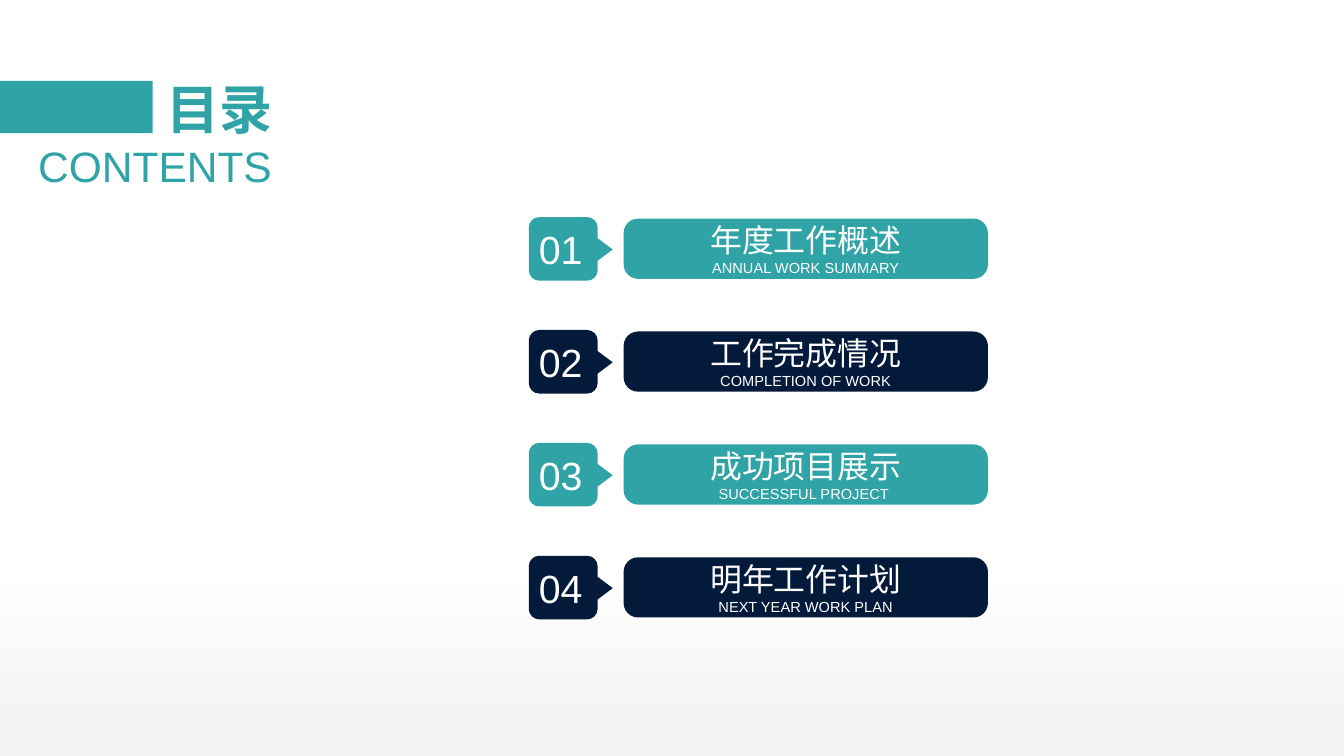
"""Build a contents slide with four numbered sections."""
from lxml.etree import SubElement
from pptx import Presentation
from pptx.dml.color import RGBColor
from pptx.enum.shapes import MSO_SHAPE
from pptx.enum.text import MSO_ANCHOR, PP_ALIGN
from pptx.oxml.ns import qn
from pptx.util import Cm, Pt

WIDE, HIGH = 35.71, 20.09
TEAL, NAVY, WHITE, GREY = "2FA3A5", "041A3B", "FFFFFF", "F2F2F2"
ITEMS = [
    ("年度工作概述", "ANNUAL WORK SUMMARY"),
    ("工作完成情况", "COMPLETION OF WORK"),
    ("成功项目展示", "SUCCESSFUL PROJECT "),
    ("明年工作计划", "NEXT YEAR WORK PLAN"),
]
FIRST, STEP = 5.81, 3.0


def tint(code):
    """Turn a hex string into a colour."""
    return RGBColor.from_string(code)


def paint(shape, code):
    """Give a shape a flat fill with no line or shadow."""
    shape.fill.solid()
    shape.fill.fore_color.rgb = tint(code)
    shape.line.fill.background()
    shape.shadow.inherit = False


def frame(shape, anchor=MSO_ANCHOR.MIDDLE, right=0.0):
    """Set the margins and anchor of a shape's text."""
    body = shape.text_frame
    body.word_wrap = True
    body.vertical_anchor = anchor
    body.margin_left = body.margin_top = body.margin_bottom = 0
    body.margin_right = Cm(right)
    return body


def write(body, text, size=24, color=WHITE, bold=False, align=PP_ALIGN.CENTER):
    """Add one paragraph of text, filling the empty first one if free."""
    para = body.paragraphs[0]
    if para.runs:
        para = body.add_paragraph()
    para.alignment = align
    run = para.add_run()
    run.text = text
    run.font.name = "Arial"
    run.font.size = Pt(size)
    run.font.bold = bold
    run.font.color.rgb = tint(color)


def box(slide, kind, left, top, width, height, code):
    """Add a filled preset shape."""
    shape = slide.shapes.add_shape(kind, Cm(left), Cm(top), Cm(width), Cm(height))
    paint(shape, code)
    return shape


def label(slide, left, top, width, height, text, anchor, **style):
    """Add a right-aligned teal text box."""
    shape = slide.shapes.add_textbox(Cm(left), Cm(top), Cm(width), Cm(height))
    write(frame(shape, anchor), text, color=TEAL, align=PP_ALIGN.RIGHT, **style)


def bend(line, start, corner, end):
    """Turn a straight segment into a curve that rounds a corner."""
    line.tag = qn("a:cubicBezTo")
    pulls = [[p + 0.55 * (c - p) for p, c in zip(side, corner)]
             for side in (start, end)]
    line.clear()
    for x, y in pulls + [end]:
        SubElement(line, qn("a:pt"), x=str(Cm(x)), y=str(Cm(y)))


def tag(slide, left, top, code, text):
    """Draw a rounded number tag that points right."""
    width, height, tip, inset = 1.83, 1.69, 2.23, 0.28
    far, low, middle = width - inset, height - inset, 0.86
    dots = [(far, 0), (inset, 0), (0, inset), (0, low), (inset, height),
            (far, height), (width, low), (width, middle + 0.3), (tip, middle),
            (width, middle - 0.3), (width, inset), (far, 0)]
    spots = [(Cm(left + x), Cm(top + y)) for x, y in dots]
    pen = slide.shapes.build_freeform(*spots[0])
    pen.add_line_segments(spots[1:], close=True)
    shape = pen.convert_to_shape()
    lines = list(shape.element.iter(qn("a:lnTo")))
    corners = {2: (0, 0), 4: (0, height), 6: (width, height), 11: (width, 0)}
    for spot, corner in corners.items():
        bend(lines[spot - 1], dots[spot - 1], corner, dots[spot])
    paint(shape, code)
    write(frame(shape, right=0.53), text, size=29.6)


def bar(slide, top, code, title, note):
    """Draw a rounded bar with a title and its translation."""
    shape = box(slide, MSO_SHAPE.ROUNDED_RECTANGLE, 16.57, top, 9.68, 1.6, code)
    shape.adjustments[0] = 0.24
    body = frame(shape)
    write(body, title)
    write(body, note, size=11)


def backdrop(slide):
    """Fade the layout from white to grey at the foot."""
    shape = box(slide, MSO_SHAPE.RECTANGLE, 0, 0, WIDE, HIGH, WHITE)
    fill = shape.fill
    fill.gradient()
    fill.gradient_angle = 90
    for stop, (place, code) in zip(fill.gradient_stops, [(0, GREY), (0.26, WHITE)]):
        stop.position = place
        stop.color.rgb = tint(code)
    slide.slide_layout.shapes.element.insert(2, shape.element)


def main():
    """Build and save the slide."""
    deck = Presentation()
    deck.slide_width, deck.slide_height = Cm(WIDE), Cm(HIGH)
    slide = deck.slides.add_slide(deck.slide_layouts[6])
    backdrop(slide)
    for row, (title, note) in enumerate(ITEMS):
        top = FIRST + row * STEP
        code = (TEAL, NAVY)[row % 2]
        bar(slide, top, code, title, note)
        tag(slide, 14.05, top - 0.04, code, f"{row + 1:02}")
    box(slide, MSO_SHAPE.RECTANGLE, 0, 2.15, 4.06, 1.39, TEAL)
    label(slide, 4.06, 2.03, 3.18, 1.71, "目录", MSO_ANCHOR.MIDDLE, size=40, bold=True)
    label(slide, 0, 3.72, 7.23, 1.37, "CONTENTS", MSO_ANCHOR.TOP, size=32)
    deck.save("out.pptx")


if __name__ == "__main__":
    main()
